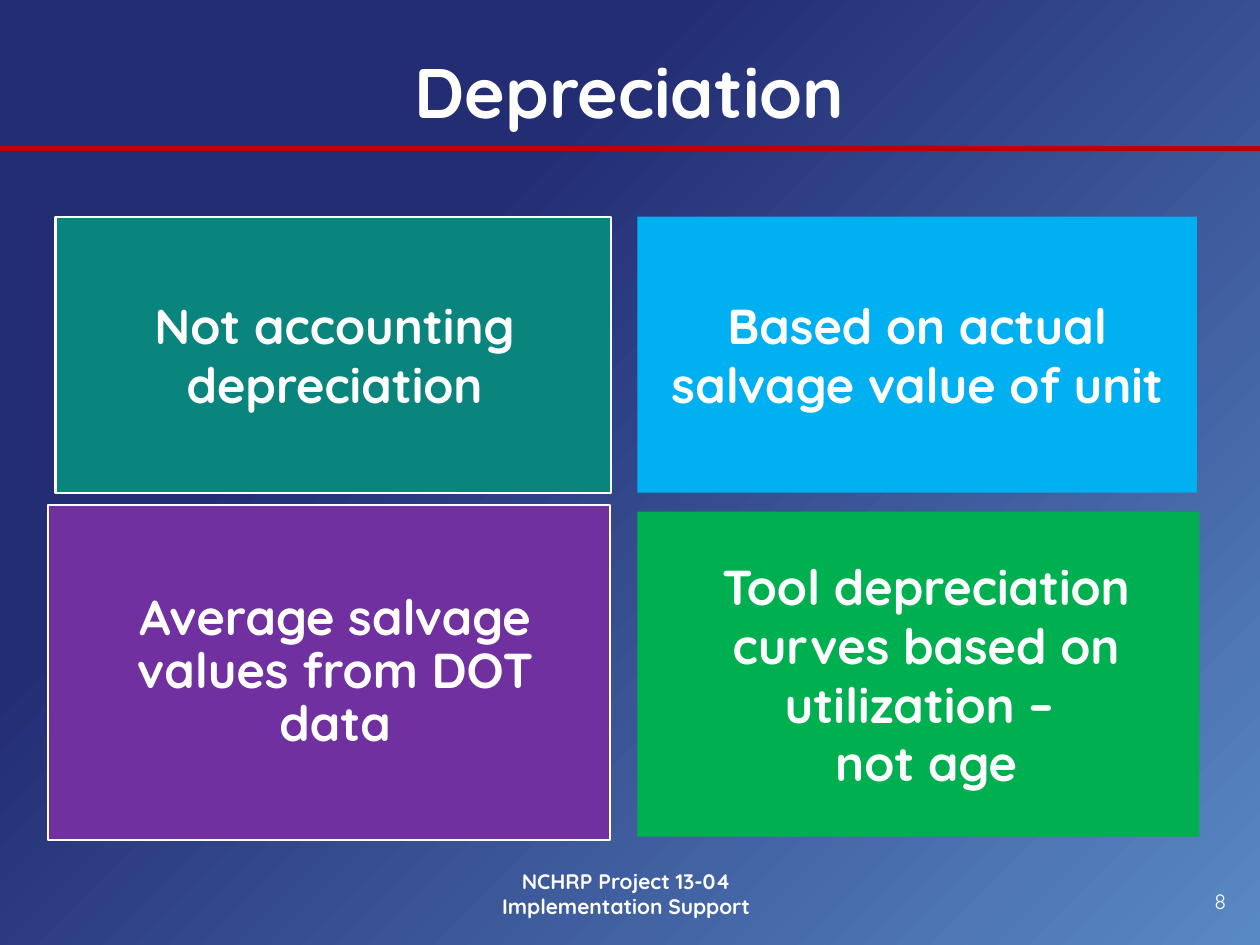
from lxml import etree
from pptx import Presentation
from pptx import util as u
from pptx.dml.color import RGBColor
from pptx.enum import shapes, text
from pptx.oxml import parse_xml
from pptx.oxml.ns import nsdecls, qn

PX = 9144  # 100 px to the inch
WHITE = "FFFFFF"
ALIGN = text.PP_ALIGN


def color(hex_value):
    return RGBColor.from_string(hex_value)


def write(shape, words, size, bold=True, align=ALIGN.CENTER, spacing=None, **margins):
    frame = shape.text_frame
    frame.text = words
    frame_format = {"word_wrap": True, "auto_size": text.MSO_AUTO_SIZE.NONE,
                    "vertical_anchor": text.MSO_ANCHOR.MIDDLE, **margins}
    for name, value in frame_format.items():
        setattr(frame, name, value)
    paragraph = frame.paragraphs[0]
    paragraph.alignment = align
    paragraph.line_spacing = spacing
    for run in paragraph.runs:
        for name, value in {"name": "Quicksand", "size": u.Pt(size), "bold": bold}.items():
            setattr(run.font, name, value)
        run.font.color.rgb = color(WHITE)


deck = Presentation()
deck.slide_width, deck.slide_height = 1000 * PX, 750 * PX
slide = deck.slides.add_slide(deck.slide_layouts[5])

# Background: radial gradient from the bottom right corner
backdrop = slide.background.fill
backdrop.gradient()
old_gradient = slide.background._cSld.find(".//" + qn("a:gradFill"))
radial = parse_xml(
    f'<a:gradFill {nsdecls("a")} rotWithShape="1"><a:gsLst>'
    '<a:gs pos="0"><a:srgbClr val="5989C4"/></a:gs>'
    '<a:gs pos="69000"><a:srgbClr val="232D74"/></a:gs></a:gsLst>'
    '<a:path path="circle"><a:fillToRect l="100000" t="100000"/></a:path></a:gradFill>')
old_gradient.getparent().replace(old_gradient, radial)

# Red rule under the title
rule = slide.shapes.add_connector(shapes.MSO_CONNECTOR.STRAIGHT,
                                  1000 * PX, 118 * PX, 0, 118 * PX)
rule.line.color.rgb = color("C00000")
rule.line.width = u.Pt(3)
etree.SubElement(rule._element.spPr, qn("a:effectLst"))

# Title
title = slide.shapes.title
for name, value in {"left": 114, "top": 33, "width": 771, "height": 78}.items():
    setattr(title, name, value * PX)
write(title, "Depreciation", 40)

# Four statements: words, box, fill, outlined, line spacing, side margins
statements = [
    ("Not accounting depreciation", (44, 172, 441, 219), "09857D", True, 1, (19, 17)),
    ("Based on actual salvage value of unit", (506, 172, 444, 219), "00B0F0", False, 1, (17, 17)),
    ("Average salvage values from DOT data", (38, 401, 446, 266), "7030A0", True, 0.9, (37, 27)),
    ("Tool depreciation curves based on utilization – \vnot age", (506, 406, 446, 258),
     "00B050", False, 1, (29, 17)),
]
for words, box, fill, outlined, spacing, (left, right) in statements:
    panel = slide.shapes.add_shape(shapes.MSO_SHAPE.RECTANGLE, *(n * PX for n in box))
    panel.shadow.inherit = False
    panel.fill.solid()
    panel.fill.fore_color.rgb = color(fill)
    if outlined:
        panel.line.color.rgb = color(WHITE)
        panel.line.width = u.Pt(1.25)
    else:
        panel.line.fill.background()
    write(panel, words, 28, spacing=spacing, margin_left=left * PX, margin_right=right * PX,
          margin_top=17 * PX, margin_bottom=17 * PX)

# Footer and slide number
footer = slide.shapes.add_textbox(*(n * PX for n in (342, 683, 310, 52)))
write(footer, "NCHRP Project 13-04\vImplementation Support", 12)
number = slide.shapes.add_textbox(*(n * PX for n in (758, 695, 225, 40)))
write(number, "8", 12, bold=False, align=ALIGN.RIGHT)

deck.save("out.pptx")
